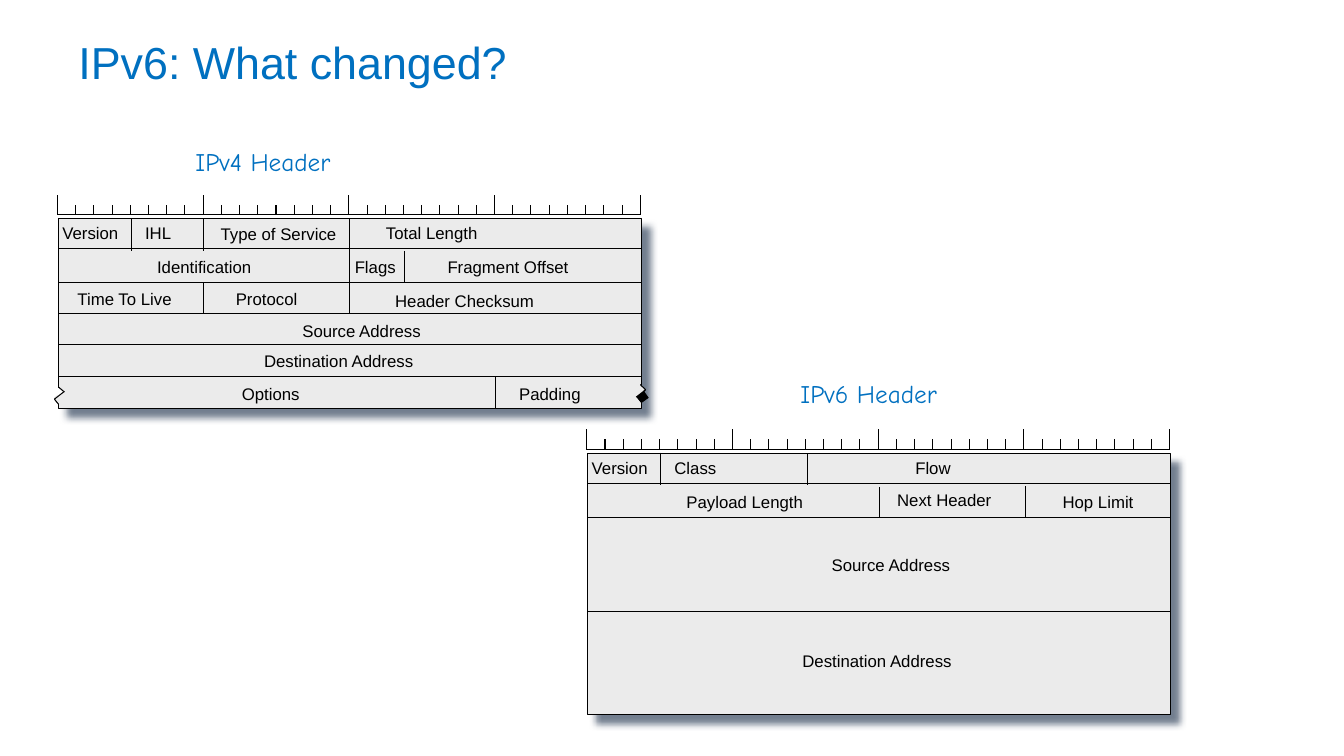
from lxml import etree
from pptx import Presentation
from pptx.dml.color import RGBColor
from pptx.enum.shapes import MSO_CONNECTOR, MSO_SHAPE
from pptx.enum.text import MSO_AUTO_SIZE
from pptx.oxml.ns import qn
from pptx.util import Pt

PX = 9144
SLIDE_SIZE = (1333, 750)
STRAIGHT = MSO_CONNECTOR.STRAIGHT
RECTANGLE = MSO_SHAPE.RECTANGLE
TRIANGLE = MSO_SHAPE.RIGHT_TRIANGLE
FIT_TEXT = MSO_AUTO_SIZE.SHAPE_TO_FIT_TEXT

BLACK = RGBColor(0x00, 0x00, 0x00)
WHITE = RGBColor(0xFF, 0xFF, 0xFF)
GRAY = RGBColor(0xEB, 0xEB, 0xEB)
BLUE = RGBColor(0x00, 0x70, 0xC0)
SHADOW = RGBColor(0x44, 0x54, 0x6A)

LINE_WIDTH = 0.75
HEADER_WIDTH = 578
BITS = 32
BITS_PER_MAJOR = 8
MAJOR_TICK = 20
MINOR_TICK = 10
RULER_SHIFT = 1
RULER_GAP = 4
LABEL_HEIGHT = 30

TITLES = [
    ("IPv4 Header", 184, 140, 177, 40, "Comic Neue", 18),
    ("IPv6 Header", 784, 370, 178, 40, "Comic Neue", 18),
    ("IPv6: What changed?", 68, 30, 537, 64, "Arial", 32),
]

HEADERS = [
    {
        "left": 58, "top": 217, "height": 188,
        "rows": [247, 280, 310, 342, 374],
        "dividers": [(347, 217, 311), (491, 374, 405), (401, 249, 281),
                     (130, 217, 249), (202, 217, 249), (202, 281, 312)],
        "labels": [
            ("Version", 52, 216, 76), ("IHL", 134, 216, 46),
            ("Type of Service", 209, 217, 136), ("Total Length", 373, 216, 112),
            ("Identification", 146, 250, 114), ("Flags", 342, 250, 61),
            ("Fragment Offset", 434, 250, 141), ("Time To Live", 67, 282, 115),
            ("Protocol", 224, 282, 82), ("Header Checksum", 382, 284, 159),
            ("Source Address", 290, 313, 139), ("Destination Address", 252, 343, 169),
            ("Options", 230, 376, 78), ("Padding", 505, 376, 82),
        ],
    },
    {
        "left": 583, "top": 450, "height": 259,
        "rows": [480, 513, 607],
        "dividers": [(872, 483, 513), (1017, 482, 513),
                     (655, 449, 481), (801, 450, 481)],
        "labels": [
            ("Version", 577, 449, 76), ("Class", 659, 449, 62), ("Flow", 898, 449, 56),
            ("Payload Length", 671, 483, 137), ("Next Header", 880, 481, 114),
            ("Hop Limit", 1044, 483, 91), ("Source Address", 815, 545, 139),
            ("Destination Address", 786, 641, 169),
        ],
    },
]

BREAK_PIECES = [
    (RECTANGLE, 621, 379, 16, 16, 42.3, GRAY, BLACK),
    (RECTANGLE, 613, 375, 22, 25, 0, GRAY, None),
    (RECTANGLE, 633, 390, 9, 8, 324.6, BLACK, None),
    (RECTANGLE, 55, 391, 9, 8, 324.6, GRAY, None),
    (TRIANGLE, 55, 385, 7, 7, 225, WHITE, None),
]
BREAK_LINES = [
    (640, 387, 631, 394, BLACK),
    (636, 399, 632, 394, BLACK),
    (58, 401, 54, 396, BLACK),
    (58, 385, 58, 392, WHITE),
    (63, 389, 54, 396, BLACK),
    (58, 384, 64, 389, BLACK),
]


def add_line(shapes, x1, y1, x2, y2, color=BLACK):
    line = shapes.add_connector(STRAIGHT, *(round(v * PX) for v in (x1, y1, x2, y2)))
    line.line.color.rgb = color
    line.line.width = Pt(LINE_WIDTH)
    etree.SubElement(line._element.spPr, qn("a:effectLst"))
    return line


def add_piece(shapes, kind, left, top, width, height, rotation, fill, outline):
    shape = shapes.add_shape(kind, left * PX, top * PX, width * PX, height * PX)
    shape.rotation = rotation
    shape.fill.solid()
    shape.fill.fore_color.rgb = fill
    if outline is None:
        shape.line.fill.background()
    else:
        shape.line.color.rgb = outline
        shape.line.width = Pt(LINE_WIDTH)
    shape.shadow.inherit = False
    return shape


def add_text(shapes, text, left, top, width, height, font, size, color):
    box = shapes.add_textbox(left * PX, top * PX, width * PX, height * PX)
    frame = box.text_frame
    frame.text = text
    frame.word_wrap = False
    frame.auto_size = FIT_TEXT
    run = frame.paragraphs[0].runs[0]
    run.font.name = font
    run.font.size = Pt(size)
    run.font.color.rgb = color


def add_shadow(shape):
    effects = shape._element.spPr.find(qn("a:effectLst"))
    outer = etree.SubElement(effects, qn("a:outerShdw"), blurRad=str(Pt(5)),
                             dist=str(Pt(8.5)), dir="2700000", algn="tl",
                             rotWithShape="0")
    color = etree.SubElement(outer, qn("a:srgbClr"), val=str(SHADOW))
    etree.SubElement(color, qn("a:alpha"), val="75000")


def add_ruler(shapes, left, base):
    ruler = shapes.add_group_shape().shapes
    add_line(ruler, left, base, left + HEADER_WIDTH, base)
    for bit in range(BITS + 1):
        x = left + HEADER_WIDTH * bit / BITS
        tick = MINOR_TICK if bit % BITS_PER_MAJOR else MAJOR_TICK
        add_line(ruler, x, base, x, base - tick)


def add_header(shapes, header):
    left, top, height = header["left"], header["top"], header["height"]
    right, bottom = left + HEADER_WIDTH, top + height
    middle_x, middle_y = left + HEADER_WIDTH / 2, top + height / 2
    sides = [(middle_x, top), (left, middle_y), (middle_x, bottom), (right, middle_y)]
    box = add_piece(shapes, RECTANGLE, left, top, HEADER_WIDTH, height, 0, GRAY, BLACK)
    add_shadow(box)
    lines = [(x, y1, x, y2) for x, y1, y2 in header["dividers"]]
    lines += [(left, y, right, y) for y in header["rows"]]
    for x1, y1, x2, y2 in lines:
        line = add_line(shapes, x1, y1, x2, y2)
        for site, (x, y) in enumerate(sides):
            if max(abs(x - x1), abs(y - y1)) <= 1:
                line.begin_connect(box, site)
            if max(abs(x - x2), abs(y - y2)) <= 1:
                line.end_connect(box, site)
    for text, x, y, width in header["labels"]:
        add_text(shapes, text, x, y, width, LABEL_HEIGHT, "Arial", 12, BLACK)
    add_ruler(shapes, left - RULER_SHIFT, top - RULER_GAP)


def main():
    presentation = Presentation()
    presentation.slide_width, presentation.slide_height = (v * PX for v in SLIDE_SIZE)
    slide = presentation.slides.add_slide(presentation.slide_layouts[6])
    shapes = slide.shapes
    for header in HEADERS:
        add_header(shapes, header)
    for piece in BREAK_PIECES:
        add_piece(shapes, *piece)
    for line in BREAK_LINES:
        add_line(shapes, *line)
    for title in TITLES:
        add_text(shapes, *title, BLUE)
    presentation.save("out.pptx")


if __name__ == "__main__":
    main()
